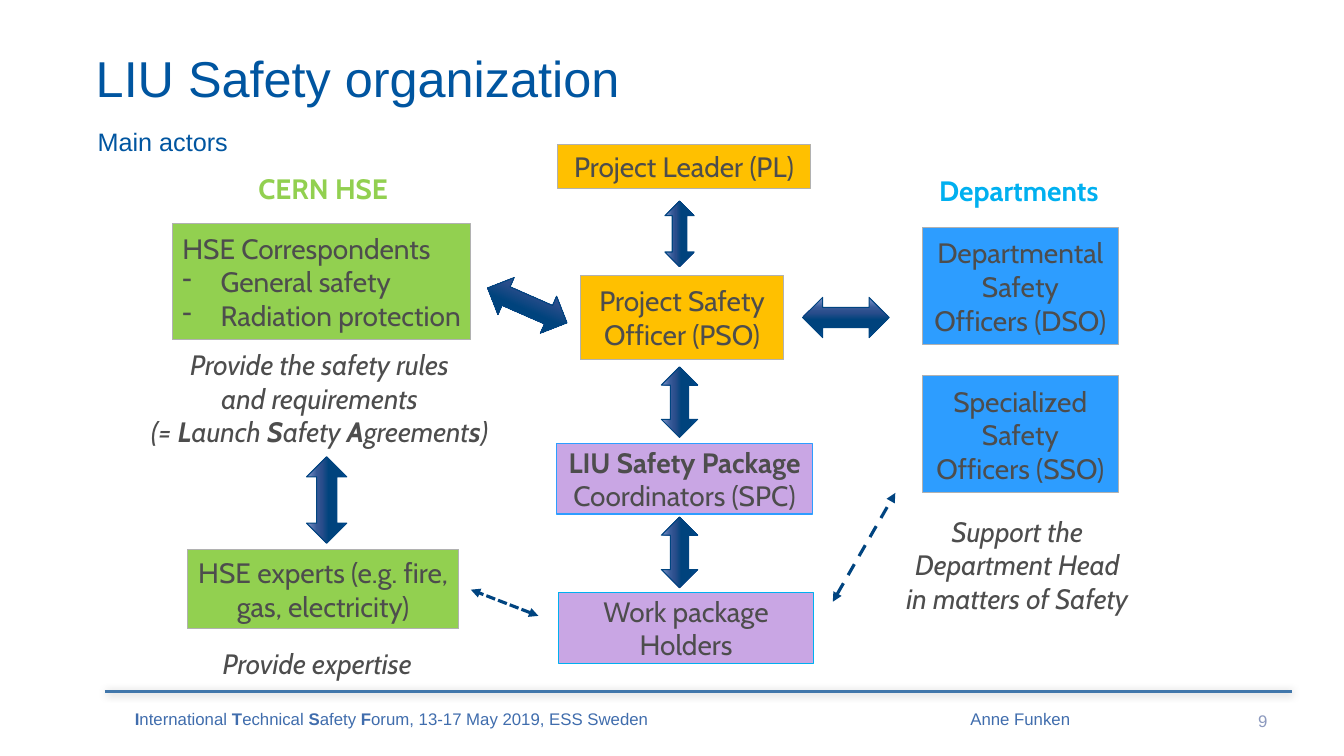
from dataclasses import dataclass

from pptx import Presentation
from pptx.dml.color import RGBColor
from pptx.enum import dml, shapes, text
from pptx.oxml import ns, xmlchemy
from pptx.util import Inches, Pt

TITLE_BLUE = RGBColor(0x00, 0x55, 0xA0)
FOOTER_BLUE = RGBColor(0x40, 0x6D, 0xAD)
NUMBER_BLUE = RGBColor(0x8C, 0x99, 0xBE)
RULE_BLUE = RGBColor(0x41, 0x77, 0xAB)
ARROW_BLUE = RGBColor(0x00, 0x44, 0x80)
DARK = RGBColor(0x4D, 0x4D, 0x4D)
GREY = RGBColor(0xB1, 0xB1, 0xB1)
ORANGE = RGBColor(0xFF, 0xC0, 0x00)
GREEN = RGBColor(0x92, 0xD0, 0x50)
BLUE = RGBColor(0x2D, 0x9D, 0xFF)
CYAN = RGBColor(0x00, 0xB0, 0xF0)
PURPLE = RGBColor(0xC9, 0xA6, 0xE4)
ARROW_STOPS = [(0, "8498CC"), (25, "375A98"), (38, "2A4D8B"), (55, "00437D"),
               (80, "00427C"), (88, "004683"), (100, "0055B9")]

LEFT, CENTER, RIGHT = text.PP_ALIGN.LEFT, text.PP_ALIGN.CENTER, text.PP_ALIGN.RIGHT
TOP, MIDDLE = text.MSO_ANCHOR.TOP, text.MSO_ANCHOR.MIDDLE


@dataclass
class Box:
    left: float
    top: float
    width: float
    height: float

    def inner(self, dx, dy, width, height):
        return Box(self.left + dx, self.top + dy, width, height)

    def lengths(self):
        return [Inches(v) for v in (self.left, self.top, self.width, self.height)]


def add_xml(parent, tag, **attributes):
    child = xmlchemy.OxmlElement(tag)
    for name, value in attributes.items():
        child.set(name, str(value))
    parent.append(child)
    return child


def write(frame, content, size=20, font="Cabin", color=DARK, align=CENTER,
          anchor=TOP, bold=False, italic=False, inset=0.1):
    """One paragraph per line; *stars* mark bold spans, a leading "- " a bullet."""
    frame.word_wrap = True
    frame.vertical_anchor = anchor
    frame.margin_left = frame.margin_right = Inches(inset)
    for index, line in enumerate(content.split("\n")):
        para = frame.add_paragraph() if index else frame.paragraphs[0]
        para.alignment = align
        if line.startswith("- "):
            line = line[2:]
            properties = para._p.get_or_add_pPr()
            properties.set("marL", str(Inches(0.38)))
            properties.set("indent", str(-Inches(0.38)))
            add_xml(properties, "a:buChar", char="-")
        for number, piece in enumerate(line.split("*")):
            if piece:
                span = para.add_run()
                span.text = piece
                span.font.name, span.font.size = font, Pt(size)
                span.font.color.rgb = color
                span.font.bold = bold or number % 2 == 1
                span.font.italic = italic


def add_label(page, box, content, **style):
    write(page.shapes.add_textbox(*box.lengths()).text_frame, content, **style)


def add_block(page, box, content, fill, line=GREY, **style):
    block = page.shapes.add_shape(shapes.MSO_SHAPE.RECTANGLE, *box.lengths())
    block.shadow.inherit = False
    block.fill.solid()
    block.fill.fore_color.rgb = fill
    block.line.color.rgb = line
    block.line.width = Pt(0.75)
    write(block.text_frame, content, anchor=MIDDLE, **style)


def add_block_arrow(page, x, y, length=0.86, thickness=0.4, rotation=270):
    """Double arrow centred on x, y."""
    box = Box(x - length / 2, y - thickness / 2, length, thickness)
    arrow = page.shapes.add_shape(shapes.MSO_SHAPE.LEFT_RIGHT_ARROW, *box.lengths())
    arrow.shadow.inherit = False
    arrow.rotation = rotation
    arrow.line.color.rgb = ARROW_BLUE
    arrow.line.width = Pt(0.75)
    arrow.fill.gradient()
    arrow.fill.gradient_angle = 270
    stops = arrow._element.spPr.find(".//" + ns.qn("a:gsLst"))
    stops.clear()
    for position, color in ARROW_STOPS:
        add_xml(add_xml(stops, "a:gs", pos=position * 1000), "a:srgbClr", val=color)


def add_line(page, start, end, color):
    line = page.shapes.add_connector(shapes.MSO_CONNECTOR.STRAIGHT,
                                     *[Inches(v) for v in start + end])
    line.line.color.rgb = color
    line.line.width = Pt(2.25)
    return line, add_xml(line._element.spPr, "a:effectLst")


def add_dashed_arrow(page, start, end, dash):
    line, _ = add_line(page, start, end, ARROW_BLUE)
    line.line.dash_style = dash
    for tag in ("a:headEnd", "a:tailEnd"):
        add_xml(line.line._get_or_add_ln(), tag, type="triangle")


def draw_header(page, box):
    style = dict(font="Arial", color=TITLE_BLUE, align=LEFT)
    add_label(page, box.inner(0, 0, box.width, 0.89), "LIU Safety organization",
              size=36, anchor=MIDDLE, inset=0.05, **style)
    add_label(page, box.inner(-0.03, 0.88, 1.98, 0.4), "Main actors", size=18, **style)


def draw_hse(page, box):
    add_label(page, box.inner(0, 0, box.width, 0.44), "CERN HSE", color=GREEN, bold=True)
    add_block(page, box.inner(0, 0.57, 2.96, 1.15),
              "HSE Correspondents\n- General safety\n- Radiation protection",
              GREEN, align=LEFT)
    add_label(page, box.inner(-0.36, 1.75, 3.64, 1.11),
              "Provide the safety rules\nand requirements\n"
              "(= *L*aunch *S*afety *A*greement*s*)", italic=True)
    add_block_arrow(page, box.left + 1.53, box.top + 3.31)
    add_block(page, box.inner(0.15, 3.8, 2.69, 0.79),
              "HSE experts (e.g. fire, gas, electricity)", GREEN)
    add_label(page, box.inner(0.4, 4.71, 2.28, 0.44), "Provide expertise",
              align=LEFT, italic=True)


def draw_project(page, box):
    add_block(page, box.inner(0, 0, 2.51, 0.44), "Project Leader (PL)", ORANGE)
    add_block(page, box.inner(0.23, 1.3, 2.01, 0.84), "Project Safety Officer (PSO)", ORANGE)
    add_block(page, box.inner(-0.01, 2.97, 2.54, 0.7),
              "*LIU Safety Package *Coordinators (SPC)", PURPLE, BLUE)
    add_block(page, box.inner(0.01, 4.45, 2.53, 0.7), "Work package Holders", PURPLE, CYAN)
    for dy, length, thickness in [(0.89, 0.65, 0.29), (2.56, 0.7, 0.36), (4.05, 0.7, 0.36)]:
        add_block_arrow(page, box.left + 1.21, box.top + dy, length, thickness)


def draw_departments(page, box):
    add_label(page, box.inner(0, 0, box.width, 0.44), "Departments", color=CYAN, bold=True)
    officers = ["Departmental Safety Officers (DSO)", "Specialized Safety Officers (SSO)"]
    for row, officer in enumerate(officers):
        add_block(page, box.inner(0.15, 0.59 + 1.47 * row, 1.94, 1.16), officer, BLUE)
    add_label(page, box.inner(-0.12, 3.38, 2.42, 1.11),
              "Support the Department Head in matters of Safety", italic=True)


def draw_links(page, box):
    """Arrows between the three columns, within the area they share."""
    x, y = box.left, box.top
    add_block_arrow(page, x + 0.56, y + 0.2, rotation=23.7)
    add_block_arrow(page, x + 3.72, y + 0.32, rotation=0)
    add_dashed_arrow(page, (x + 3.59, y + 3.14), (x + 4.21, y + 2.06), dml.MSO_LINE.DASH)
    add_dashed_arrow(page, (x + 0.67, y + 3.28), (x, y + 3.02), dml.MSO_LINE.SQUARE_DOT)


def draw_footer(page, box):
    # Rule with a soft shadow
    rule_y = box.top + 0.1
    _, effects = add_line(page, (box.left + 0.14, rule_y),
                          (box.left + box.width, rule_y), RULE_BLUE)
    shadow = add_xml(effects, "a:outerShdw", blurRad=Pt(6), dist=Pt(1), dir=45 * 60000)
    add_xml(add_xml(shadow, "a:srgbClr", val="000000"), "a:alpha", val=20000)
    # Event, speaker and page number
    style = dict(size=12, font="Arial", anchor=MIDDLE)
    add_label(page, box.inner(0, 0, 5.97, box.height),
              "*I*nternational *T*echnical *S*afety *F*orum, 13-17 May 2019, ESS Sweden",
              color=FOOTER_BLUE, **style)
    add_label(page, box.inner(7.59, 0, 3.26, box.height), "Anne Funken",
              color=FOOTER_BLUE, **style)
    add_label(page, box.inner(11.04, 0.19, 0.73, 0.4), "9",
              color=NUMBER_BLUE, align=RIGHT, **style)


def main():
    deck = Presentation()
    deck.slide_width, deck.slide_height = Inches(13.33), Inches(7.5)
    page = deck.slides.add_slide(deck.slide_layouts[6])
    draw_footer(page, Box(0.9, 6.76, 11.91, 0.74))
    draw_header(page, Box(0.9, 0.32, 10.27, 1.28))
    # Three columns of actors and the arrows between them
    draw_hse(page, Box(1.71, 1.65, 2.99, 5.15))
    draw_project(page, Box(5.53, 1.43, 2.54, 5.15))
    draw_departments(page, Box(9, 1.67, 2.21, 4.49))
    draw_links(page, Box(4.67, 2.83, 4.21, 3.28))
    deck.save("out.pptx")


if __name__ == "__main__":
    main()
